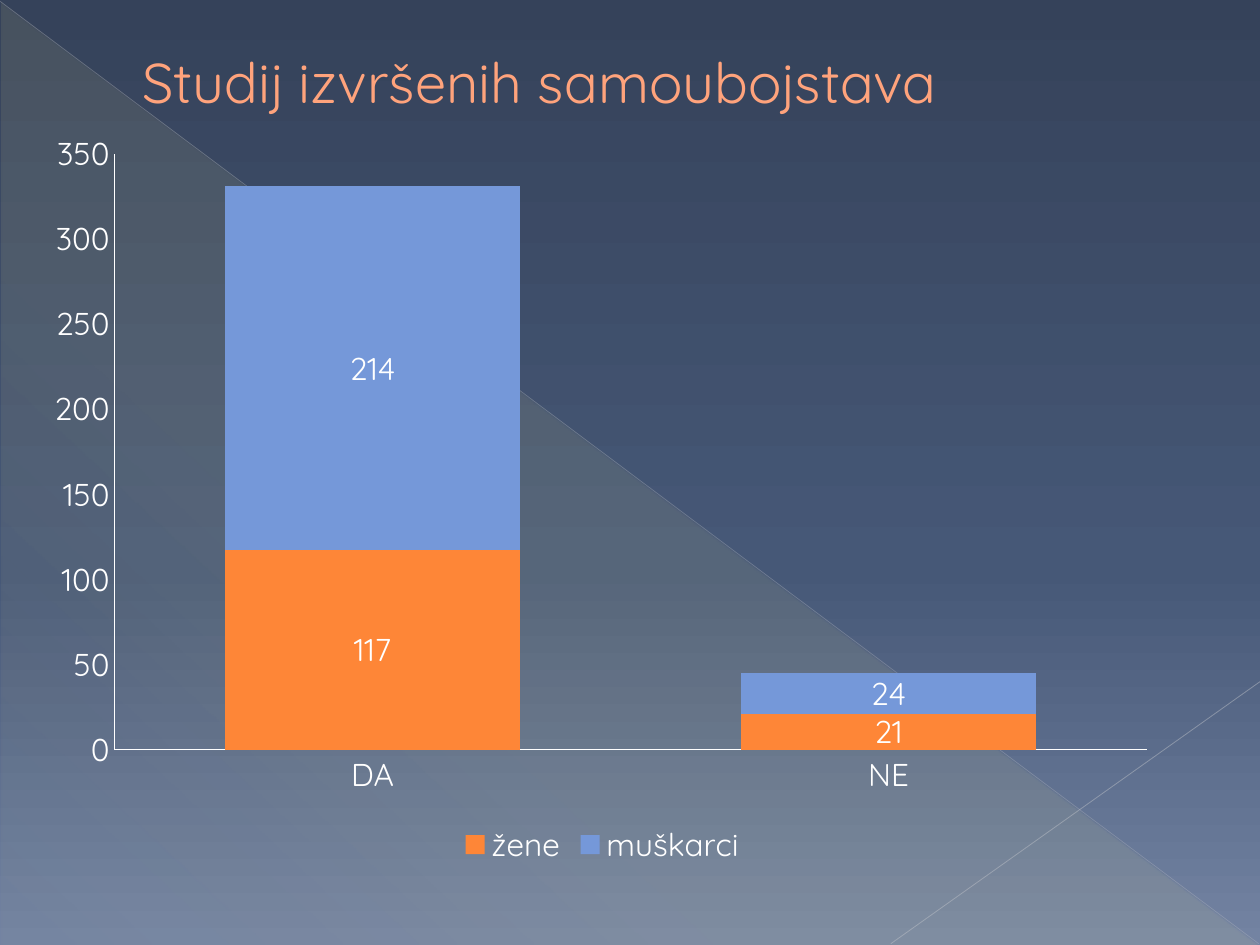
from lxml import etree
from pptx import Presentation
from pptx.chart.data import CategoryChartData
from pptx.dml.color import RGBColor
from pptx.enum import chart as ce, shapes, text
from pptx.oxml import parse_xml
from pptx.oxml.ns import nsdecls, qn
from pptx.util import Inches, Pt

FONT = "Quicksand"
WHITE = RGBColor(0xFF, 0xFF, 0xFF)
PEACH = RGBColor(0xFF, 0xA3, 0x7C)
BROWN = RGBColor(0xB0, 0x5D, 0x26)
ORANGE = RGBColor(0xFE, 0x86, 0x37)
BLUE = RGBColor(0x75, 0x98, 0xD9)
YELLOW = RGBColor(0xFF, 0xF3, 0x9D)
GREY = RGBColor(0xBA, 0xBD, 0xC4)
PALE_GREY = RGBColor(0xC1, 0xC4, 0xCA)
NIGHT = RGBColor(0x35, 0x42, 0x5A)
DUSK = RGBColor(0x46, 0x58, 0x77)
MIST = RGBColor(0x73, 0x83, 0xA2)


def set_gradient(fill, holder, stops, angle):
    fill.solid()
    marks = "".join(
        f'<a:gs pos="{position * 1000}"><a:srgbClr val="{color}">'
        f'<a:alpha val="{opacity * 1000}"/></a:srgbClr></a:gs>'
        for position, color, opacity in stops
    )
    gradient = parse_xml(
        f'<a:gradFill {nsdecls("a")} rotWithShape="1"><a:gsLst>{marks}</a:gsLst>'
        f'<a:lin ang="{angle * 60000}" scaled="0"/></a:gradFill>'
    )
    solid = next(holder.iter(qn("a:solidFill")))
    solid.getparent().replace(solid, gradient)


def add_triangle(slide):
    triangle = slide.shapes.add_shape(
        shapes.MSO_SHAPE.RIGHT_TRIANGLE,
        Inches(0.01), Inches(0.02), Inches(9.98), Inches(7.48))
    triangle.shadow.inherit = False
    triangle.line.fill.background()
    stops = [(0, YELLOW, 10), (70, YELLOW, 8), (100, YELLOW, 1)]
    set_gradient(triangle.fill, triangle.element.spPr, stops, 133)


def add_ray(slide, start, end, color, width, opacity):
    ray = slide.shapes.add_connector(
        shapes.MSO_CONNECTOR.STRAIGHT, *map(Inches, start + end))
    ray.line.color.rgb = color
    ray.line.width = Pt(width)
    properties = ray.element.spPr
    tint = next(properties.iter(qn("a:srgbClr")))
    etree.SubElement(tint, qn("a:alpha")).set("val", str(opacity * 1000))
    etree.SubElement(properties, qn("a:effectLst"))


def add_title(slide, wording):
    title = slide.shapes.add_textbox(
        Inches(0.5), Inches(0.29), Inches(8.91), Inches(0.7))
    frame = title.text_frame
    frame.word_wrap = True
    frame.vertical_anchor = text.MSO_ANCHOR.MIDDLE
    frame.text = wording
    paragraph = frame.paragraphs[0]
    paragraph._p.get_or_add_pPr().set("marL", str(Inches(0.53)))
    run = paragraph.runs[0]
    run.font.size = Pt(32)
    run.font.name = FONT
    run.font.color.rgb = PEACH
    outline = parse_xml(
        f'<a:ln {nsdecls("a")} w="{Pt(0.5)}"><a:solidFill>'
        f'<a:srgbClr val="{BROWN}"/></a:solidFill></a:ln>')
    run._r.get_or_add_rPr().insert(0, outline)


def set_plot_layout(chart, x, y, width, height):
    plot_area = chart._chartSpace.chart.plotArea
    for previous in plot_area.findall(qn("c:layout")):
        plot_area.remove(previous)
    plot_area.insert(0, parse_xml(
        f'<c:layout {nsdecls("c")}><c:manualLayout><c:layoutTarget val="inner"/>'
        f'<c:xMode val="edge"/><c:yMode val="edge"/><c:x val="{x}"/><c:y val="{y}"/>'
        f'<c:w val="{width}"/><c:h val="{height}"/></c:manualLayout></c:layout>'))


def style_axis(axis):
    axis.has_major_gridlines = False
    axis.major_tick_mark = axis.minor_tick_mark = ce.XL_TICK_MARK.NONE
    axis.format.line.color.rgb = WHITE
    axis.format.line.width = Pt(0.75)


def add_study_chart(slide):
    study = CategoryChartData()
    study.categories = ["DA", "NE"]
    study.add_series("žene", [117, 21])
    study.add_series("muškarci", [214, 24])
    chart = slide.shapes.add_chart(
        ce.XL_CHART_TYPE.COLUMN_STACKED,
        Inches(0.28), Inches(0.92), Inches(9), Inches(5.99), study).chart
    chart.has_title = False
    chart.font.name = FONT
    chart.font.size = Pt(18)
    chart.font.color.rgb = WHITE
    chart.has_legend = True
    chart.legend.position = ce.XL_LEGEND_POSITION.BOTTOM
    chart.legend.include_in_layout = False
    style_axis(chart.category_axis)
    style_axis(chart.value_axis)
    chart.value_axis.minimum_scale = 0
    chart.value_axis.maximum_scale = 350
    chart.value_axis.major_unit = 50
    plot = chart.plots[0]
    plot.gap_width = 75
    plot.overlap = 100
    plot.vary_by_categories = False
    for series, color in zip(plot.series, (ORANGE, BLUE)):
        series.format.fill.solid()
        series.format.fill.fore_color.rgb = color
        series.data_labels.show_value = True
    set_plot_layout(chart, 0.07, 0.05, 0.91, 0.79)


def main():
    deck = Presentation()
    deck.slide_width, deck.slide_height = Inches(10), Inches(7.5)
    slide = deck.slides.add_slide(deck.slide_layouts[6])
    sky = [(0, NIGHT, 100), (60, DUSK, 100), (100, MIST, 100)]
    set_gradient(slide.background.fill, slide.element, sky, 90)
    add_triangle(slide)
    add_ray(slide, (0, 0.01), (9.99, 7.49), GREY, 0.39, 35)
    add_ray(slide, (10, 5.41), (7.07, 7.49), PALE_GREY, 0.47, 45)
    add_title(slide, "Studij izvršenih samoubojstava")
    add_study_chart(slide)
    deck.save("out.pptx")


if __name__ == "__main__":
    main()
